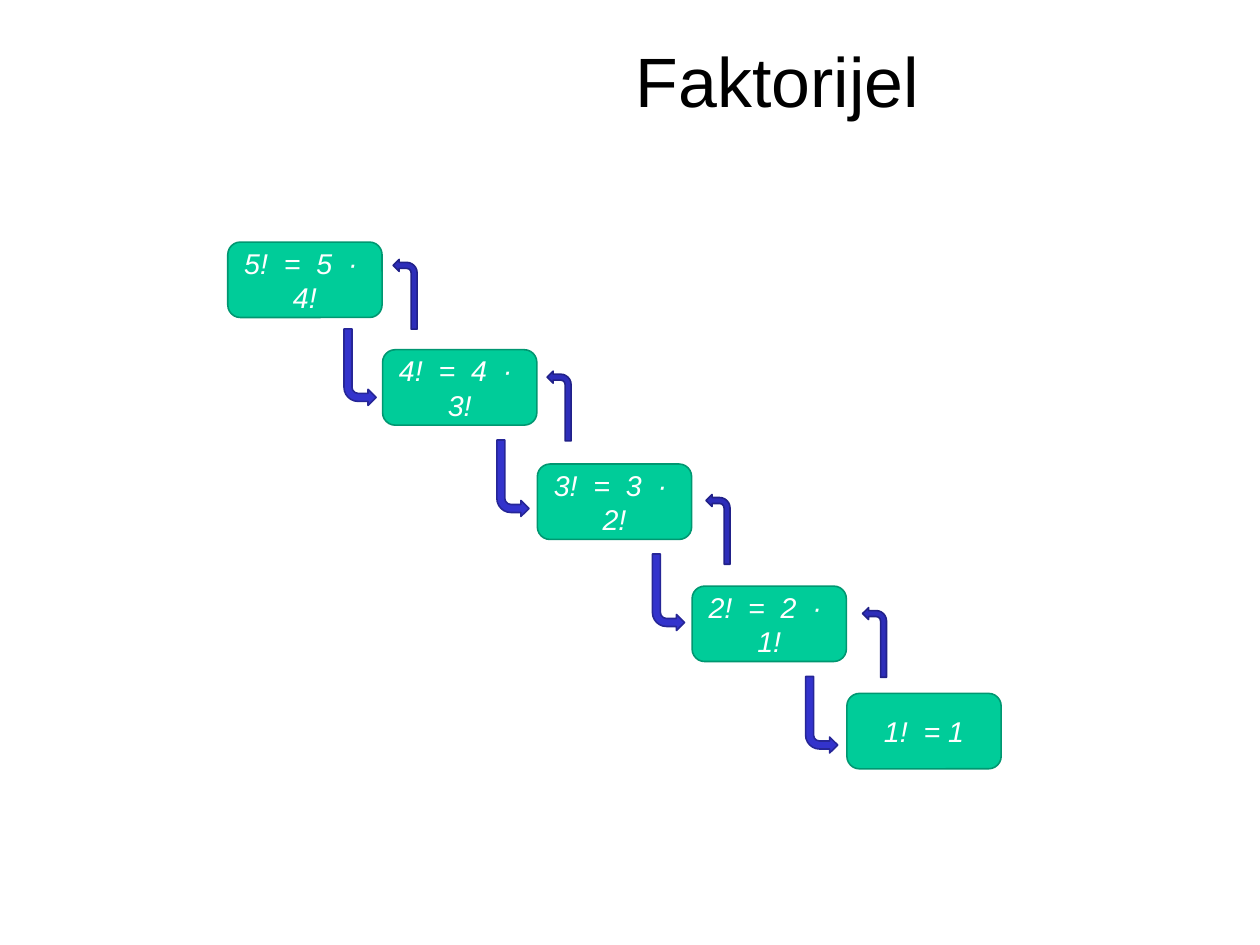
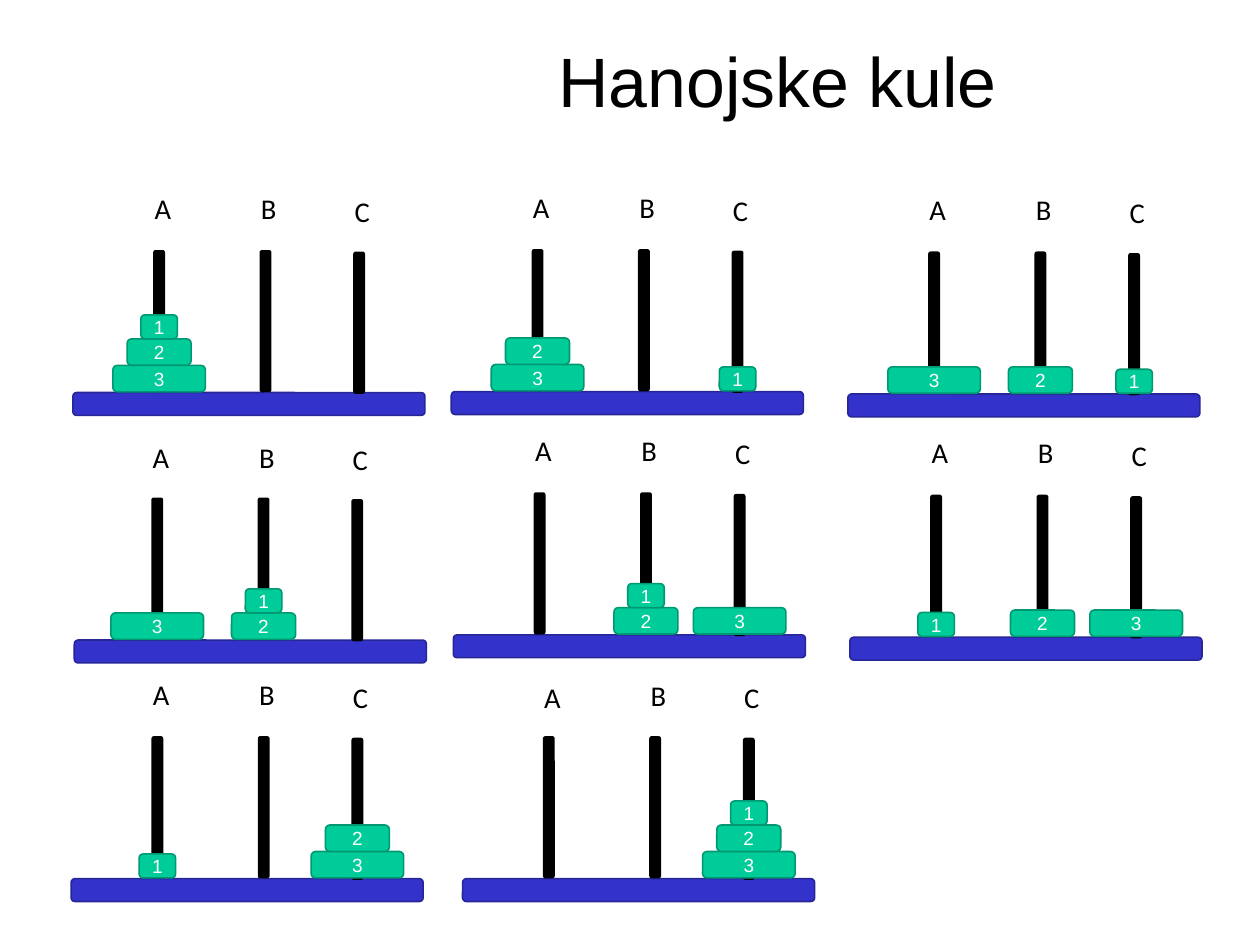
from dataclasses import dataclass

from pptx import Presentation
from pptx.dml.color import RGBColor
from pptx.enum.shapes import MSO_SHAPE
from pptx.enum.text import MSO_ANCHOR, MSO_AUTO_SIZE, PP_ALIGN
from pptx.util import Pt

ROUND = MSO_SHAPE.ROUNDED_RECTANGLE
BENT = MSO_SHAPE.BENT_ARROW
MIDDLE = MSO_ANCHOR.MIDDLE
CENTER = PP_ALIGN.CENTER
LEFT = PP_ALIGN.LEFT
GROW = MSO_AUTO_SIZE.SHAPE_TO_FIT_TEXT


@dataclass(frozen=True)
class Theme:
    # Each pair is fill and outline
    green: tuple = ("00CC99", "009771")
    blue: tuple = ("3333CC", "262697")
    navy: tuple = ("2D2DB9", "212189")
    black: tuple = ("000000", "000000")
    ink: str = "000000"
    white: str = "FFFFFF"
    sans: str = "Arial"
    label: str = "Calibri"
    title: float = 44
    body: float = 18
    small: float = 12


THEME = Theme()
PAGE_W, PAGE_H = 793.75, 595.25

# Factorial staircase
BOX_X, BOX_STEP, BOX_W, BOX_H = 143.5, 97.5, 97.2, 47.5
BOX_TOPS = (152.5, 220.3, 292.3, 369.2, 436.8)
DOWN = ((216.7, 207.2), (313, 277.2), (411, 349), (507.5, 426.2))
UP = ((247.7, 163.4), (344.7, 233.8), (444.8, 311.5), (543.4, 382.7))

# Towers of Hanoi
BASE_W, BASE_H = 221.8, 14.4
ROD_W, ROD_H = 6.5, 88.6
RODS = (("A", 0, 0), ("B", 67, 0), ("C", 126, 1))  # name, offset, drop
DISKS = {"1": (23, 15.1), "2": (40.3, 16.6), "3": (58.3, 16.6)}
DISK_STEP = 16.7
LEAD = 51.1
LABEL_DROPS = (0, 0, 2)


@dataclass(frozen=True)
class Tower:
    """One state: base corner and, for each rod, its disks from the bottom up."""
    x: float
    y: float
    stacks: tuple
    lead: float = LEAD
    drops: tuple = LABEL_DROPS


TOWERS = (
    Tower(45.9, 247.3, ("321", "", "")),
    Tower(284.3, 246.7, ("32", "", "1")),
    Tower(534.1, 248.2, ("3", "2", "1")),
    Tower(46.8, 403.2, ("3", "21", ""), 49, (1, 1, 2.5)),
    Tower(285.6, 399.9, ("", "21", "3")),
    Tower(535.4, 401.4, ("1", "2", "3")),
    Tower(44.8, 553.5, ("1", "", "32")),
    Tower(291.4, 553.5, ("", "", "321"), drops=(2, 1, 2)),
)


def write(frame, text, size, color, font=THEME.sans, align=CENTER, italic=False):
    frame.text = text
    para = frame.paragraphs[0]
    para.alignment = align
    face = para.runs[0].font
    face.name, face.size, face.italic = font, Pt(size), italic
    face.color.rgb = RGBColor.from_string(color)
    return para


def add_block(slide, kind, x, y, w, h, paint):
    block = slide.shapes.add_shape(kind, Pt(x), Pt(y), Pt(w), Pt(h))
    block.shadow.inherit = False
    fill, line = paint
    block.fill.solid()
    block.fill.fore_color.rgb = RGBColor.from_string(fill)
    block.line.color.rgb = RGBColor.from_string(line)
    block.line.width = Pt(1)
    return block


def add_card(slide, x, y, w, h, text, size, italic=False):
    card = add_block(slide, ROUND, x, y, w, h, THEME.green)
    frame = card.text_frame
    frame.word_wrap = True
    frame.vertical_anchor = MIDDLE
    write(frame, text, size, THEME.white, italic=italic)


def add_arrow(slide, x, y, w, h, paint, flip):
    arrow = add_block(slide, BENT, x, y, w, h, paint)
    arrow.element.spPr.xfrm.set(flip, "1")


def add_label(slide, x, y, text):
    box = slide.shapes.add_textbox(Pt(x), Pt(y), Pt(25), Pt(29.2))
    frame = box.text_frame
    frame.word_wrap = False
    frame.auto_size = GROW
    write(frame, text, THEME.body, THEME.ink, THEME.label, LEFT)


def add_page(deck, title):
    slide = deck.slides.add_slide(deck.slide_layouts[6])
    box = slide.shapes.add_textbox(Pt(226), Pt(23.3), Pt(527.8), Pt(59))
    frame = box.text_frame
    frame.word_wrap = True
    frame.vertical_anchor = MIDDLE
    write(frame, title, THEME.title, THEME.ink).line_spacing = 0.93
    return slide


def add_stack(slide, mid, floor, stack):
    for level, name in enumerate(stack):
        w, h = DISKS[name]
        top = floor - level * DISK_STEP - h
        add_card(slide, mid - w / 2, top, w, h, name, THEME.small)


def add_tower(slide, tower):
    add_block(slide, ROUND, tower.x, tower.y, BASE_W, BASE_H, THEME.blue)
    for (name, shift, sink), stack, drop in zip(RODS, tower.stacks, tower.drops):
        x = tower.x + tower.lead + shift
        top = tower.y - 89.3 + sink
        add_block(slide, ROUND, x, top, ROD_W, ROD_H, THEME.black)
        add_label(slide, x - 6.7, tower.y - 130.8 + drop, name)
        add_stack(slide, x + ROD_W / 2, tower.y - 0.5, stack)


def add_stairs(slide):
    count = len(BOX_TOPS)
    for step, top in enumerate(BOX_TOPS):
        n = count - step
        text = f"{n}!  =  {n}  ·  {n - 1}!" if n > 1 else "1!  = 1"
        add_card(slide, BOX_X + step * BOX_STEP, top, BOX_W, BOX_H,
                 text, THEME.body, italic=True)
    for x, y in DOWN:
        add_arrow(slide, x, y, 20.2, 48.2, THEME.blue, "flipV")
    for x, y in UP:
        add_arrow(slide, x, y, 15.1, 43.9, THEME.navy, "flipH")


def main():
    deck = Presentation()
    deck.slide_width, deck.slide_height = Pt(PAGE_W), Pt(PAGE_H)
    add_stairs(add_page(deck, "Faktorijel"))
    hanoi = add_page(deck, "Hanojske kule")
    for tower in TOWERS:
        add_tower(hanoi, tower)
    deck.save("out.pptx")


if __name__ == "__main__":
    main()
